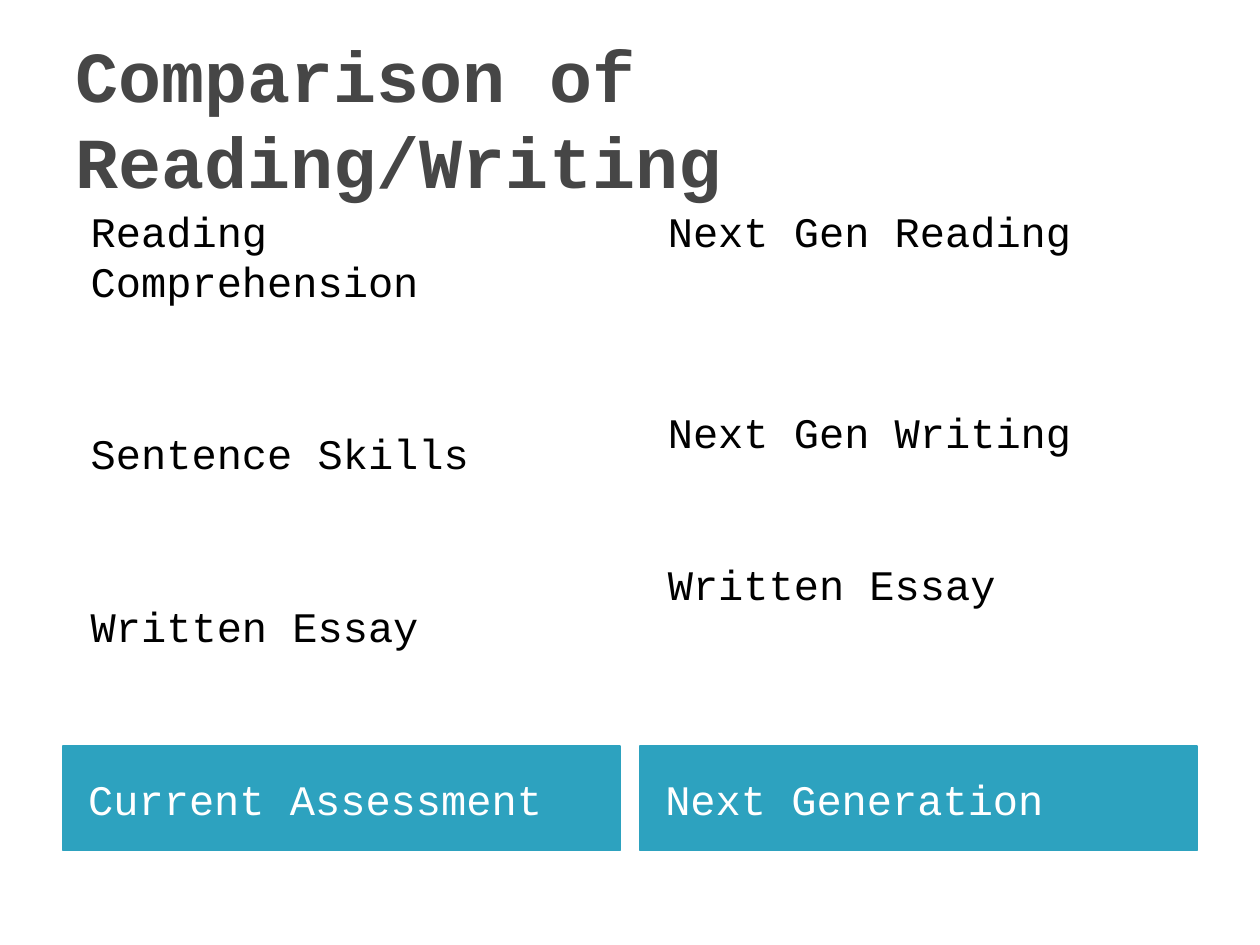
from pptx import Presentation
from pptx.dml.color import RGBColor
from pptx.enum.text import MSO_ANCHOR, MSO_AUTO_SIZE, PP_ALIGN
from pptx.oxml.ns import qn
from pptx.util import Inches, Pt

TOP, MIDDLE = MSO_ANCHOR.TOP, MSO_ANCHOR.MIDDLE
LEFT = PP_ALIGN.LEFT
NO_FIT = MSO_AUTO_SIZE.NONE
COMPARISON_LAYOUT = 4
FONT = "Courier New"
COLORS = {"title": "464646", "text": "000000", "band": "2DA2BF", "label": "FFFFFF"}

COLUMN_LEFT, COLUMN_WIDTH, COLUMN_STEP = 0.5, 4.42, 4.58

# Each column: label, then its tests with the space before each in points
COLUMNS = [
    ("Current Assessment",
     [("Reading Comprehension", 0), ("Sentence Skills", 69.5), ("Written Essay", 70)]),
    ("Next Generation",
     [("Next Gen Reading", 0), ("Next Gen Writing", 86), ("Written Essay", 58)]),
]


def place(shape, left, top, width, height):
    shape.left, shape.top = Inches(left), Inches(top)
    shape.width, shape.height = Inches(width), Inches(height)


def write(shape, items, size=24, color="text", bold=False, anchor=TOP,
          inset=0.1, indent=0):
    """Fill a placeholder with (text, space before) paragraphs."""
    frame = shape.text_frame
    frame.word_wrap = True
    frame.auto_size = NO_FIT
    frame.vertical_anchor = anchor
    frame.margin_left, frame.margin_right = Inches(inset), Inches(0.1)
    frame.margin_top = frame.margin_bottom = Inches(0.05)
    for index, (text, space) in enumerate(items):
        para = frame.paragraphs[0] if index == 0 else frame.add_paragraph()
        para.alignment = LEFT
        para.space_before = Pt(space)
        properties = para._p.get_or_add_pPr()
        properties.set("marL", str(Inches(indent)))
        properties.set("indent", "0")
        properties.append(properties.makeelement(qn("a:buNone"), {}))
        span = para.add_run()
        span.text = text
        span.font.name = FONT
        span.font.size = Pt(size)
        span.font.bold = bold
        span.font.color.rgb = RGBColor.from_string(COLORS[color])


def add_title(shape, box):
    place(shape, *box)
    write(shape, [("Comparison of Reading/Writing", 0)], size=41, color="title",
          bold=True, anchor=MIDDLE)


def add_column(label_shape, list_shape, box, label, tests):
    left, top, width, height = box
    list_height, label_height = 4.31, 0.83

    # Tests
    place(list_shape, left, top, width, list_height)
    write(list_shape, tests, indent=0.12)

    # Coloured label at the foot of the column
    place(label_shape, left, top + height - label_height, width, label_height)
    band = RGBColor.from_string(COLORS["band"])
    label_shape.fill.solid()
    label_shape.fill.fore_color.rgb = band
    label_shape.line.color.rgb = band
    label_shape.line.width = Pt(0.75)
    write(label_shape, [(label, 0)], color="label", anchor=MIDDLE, inset=0.2)


def main():
    deck = Presentation()
    deck.slide_width, deck.slide_height = Inches(10), Inches(7.5)
    page = deck.slides.add_slide(deck.slide_layouts[COMPARISON_LAYOUT])
    title, *bodies = page.placeholders
    add_title(title, (0.5, 0.3, 9, 1.25))
    for index, (label, tests) in enumerate(COLUMNS):
        label_shape, list_shape = bodies[2 * index:2 * index + 2]
        box = (COLUMN_LEFT + index * COLUMN_STEP, 1.58, COLUMN_WIDTH, 5.17)
        add_column(label_shape, list_shape, box, label, tests)
    deck.save("out.pptx")


if __name__ == "__main__":
    main()
